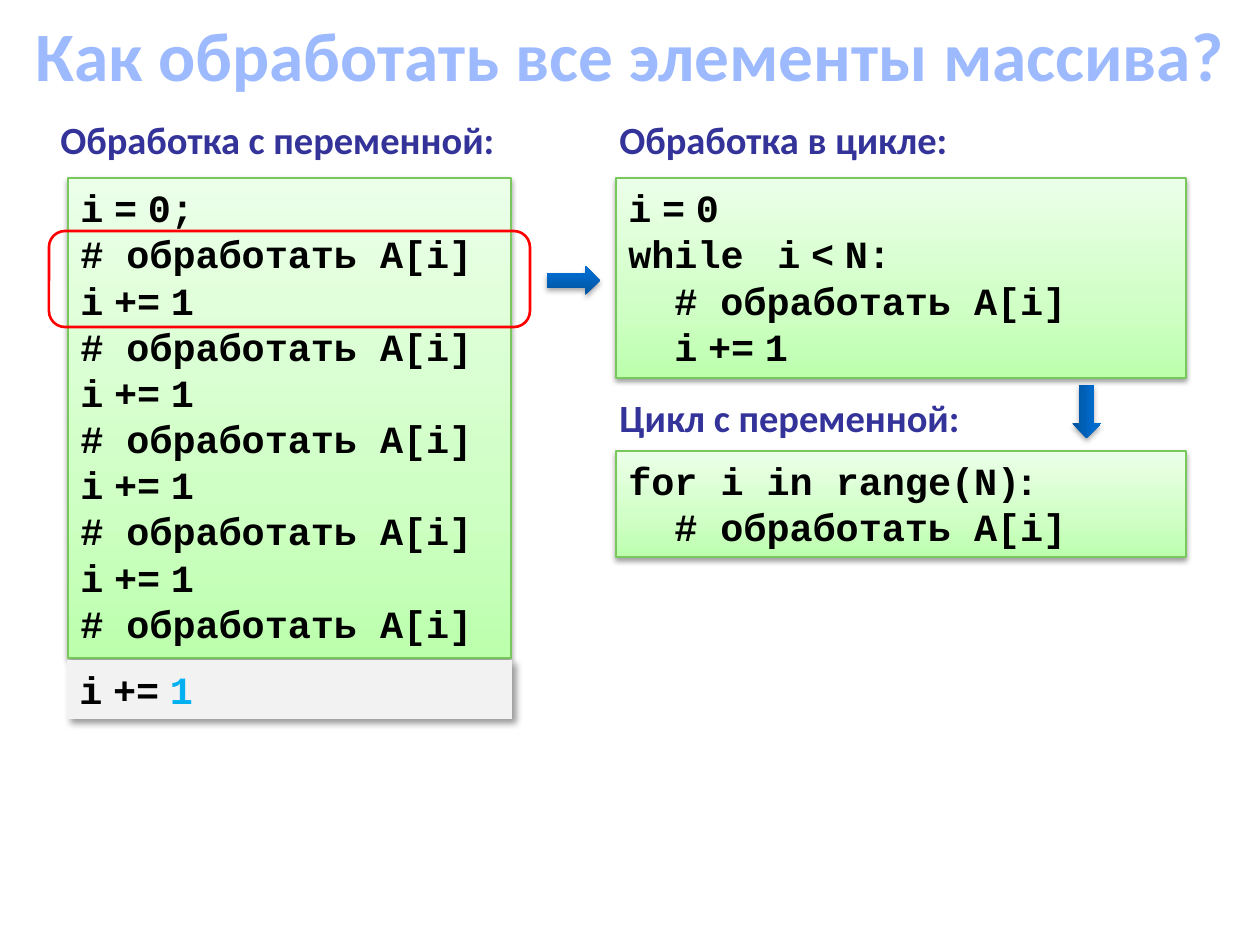
from dataclasses import dataclass

from lxml.etree import SubElement
from pptx import Presentation
from pptx.dml.color import RGBColor
from pptx.enum.shapes import MSO_SHAPE
from pptx.enum.text import MSO_ANCHOR, MSO_AUTO_SIZE, PP_ALIGN
from pptx.oxml import parse_xml
from pptx.oxml.ns import nsdecls, qn
from pptx.util import Pt


@dataclass(frozen=True)
class Theme:
    title: str = "9EBAFF"
    heading: str = "333399"
    code: str = "000000"
    number: str = "00B0F0"
    gray: str = "F2F2F2"
    edge: str = "78C85D"
    frame: str = "FF0000"
    green: tuple = ((0, "BCFFAD"), (35, "CFFFC5"), (100, "ECFFE9"))
    blue: tuple = ((0, "00539F"), (80, "006CCE"), (100, "006DCF"))
    sans: str = "Calibri"
    mono: str = "Courier New"
    narrow: str = "Arial"
    title_size: float = 39.6
    body_size: int = 22


T = Theme()
PX = 914400 / 126  # EMU in one px
CHAR = 23  # px, width of one code character


def add_shape(kind, box, stops=None, line=None, width=0.75, shadow=None):
    """Add a shape with an optional upward gradient, outline and shadow."""
    sp = s.shapes.add_shape(kind, *[int(v * PX) for v in box])
    sp.shadow.inherit = False
    if line:
        sp.line.color.rgb = RGBColor.from_string(line)
        sp.line.width = Pt(width)
    else:
        sp.line.fill.background()
    sp.fill.background()
    if stops:
        gs = "".join(f'<a:gs pos="{pos * 1000}"><a:srgbClr val="{color}"/></a:gs>'
                     for pos, color in stops)
        no_fill = sp.element.spPr.find(qn("a:noFill"))
        no_fill.getparent().replace(no_fill, parse_xml(
            f'<a:gradFill {nsdecls("a")} rotWithShape="1"><a:gsLst>{gs}</a:gsLst>'
            '<a:lin ang="16200000" scaled="0"/></a:gradFill>'))
    if shadow:
        alpha, blur, dist, angle = shadow
        effects = sp.element.spPr.find(qn("a:effectLst"))
        outer = SubElement(effects, qn("a:outerShdw"), blurRad=str(Pt(blur)),
                           dist=str(Pt(dist)), dir=str(angle * 60000),
                           algn="tl", rotWithShape="0")
        color = SubElement(outer, qn("a:srgbClr"), val="000000")
        SubElement(color, qn("a:alpha"), val=str(alpha * 1000))
    return sp


def write_code(sp, lines):
    """Write (indent, text) lines; every second part between bars is narrow."""
    tf = sp.text_frame
    tf.word_wrap = True
    tf.vertical_anchor = MSO_ANCHOR.TOP
    for n, (indent, text) in enumerate(lines):
        p = tf.add_paragraph() if n else tf.paragraphs[0]
        p.alignment = PP_ALIGN.LEFT
        p.font.size = Pt(T.body_size)
        p.font.bold = True
        if indent:
            p._p.get_or_add_pPr().set("marL", str(int(indent * CHAR * PX)))
        for k, part in enumerate(text.split("|")):
            r = p.add_run()
            r.text = part
            r.font.name = T.narrow if k % 2 else T.mono
            r.font.color.rgb = RGBColor.from_string(T.code)


prs = Presentation()
prs.slide_width, prs.slide_height = int(1260 * PX), int(945 * PX)
s = prs.slides.add_slide(prs.slide_layouts[5])

# Title
title = s.shapes.title
title.left, title.top, title.width, title.height = 0, 0, int(1260 * PX), int(107 * PX)
tf = title.text_frame
tf.text = "Как обработать все элементы массива?"
tf.word_wrap = True
tf.auto_size = MSO_AUTO_SIZE.NONE
tf.vertical_anchor = MSO_ANCHOR.MIDDLE
p = tf.paragraphs[0]
p.alignment = PP_ALIGN.CENTER
p.font.name, p.font.size, p.font.bold = T.sans, Pt(T.title_size), True
p.font.color.rgb = RGBColor.from_string(T.title)

# Headings
for x, y, text in [(48, 110, "Обработка с переменной:"),
                   (607, 110, "Обработка в цикле:"),
                   (607, 388, "Цикл с переменной:")]:
    tb = s.shapes.add_textbox(*[int(v * PX) for v in (x, y, 525, 59)])
    tf = tb.text_frame
    tf.word_wrap = True
    tf.text = text
    p = tf.paragraphs[0]
    p.font.name, p.font.size, p.font.bold = T.sans, Pt(T.body_size), True
    p.font.color.rgb = RGBColor.from_string(T.heading)

# Code blocks
process = "# обработать A[i]"
step = "i| |+=| |1"
unrolled = [(0, "i| |=| |0;")] + [(0, process), (0, step)] * 4 + [(0, process)]
while_loop = [(0, "i| |=| |0"), (0, "while | |i| |<| |N:"), (2, process), (2, step)]
for_loop = [(0, "for i in range(N)|:"), (2, process)]
for box, lines in [((68, 178, 443, 480), unrolled),
                   ((616, 178, 570, 200), while_loop),
                   ((616, 451, 570, 106), for_loop)]:
    sp = add_shape(MSO_SHAPE.RECTANGLE, box, T.green, T.edge, shadow=(38, 3.1, 1.6, 90))
    write_code(sp, lines)

# Last step, with its number highlighted
sp = add_shape(MSO_SHAPE.RECTANGLE, (67, 660, 445, 59), shadow=(40, 4, 3, 45))
sp.fill.solid()
sp.fill.fore_color.rgb = RGBColor.from_string(T.gray)
write_code(sp, [(0, step)])
sp.text_frame.paragraphs[0].runs[-1].font.color.rgb = RGBColor.from_string(T.number)

# Frame around the repeated pair
add_shape(MSO_SHAPE.ROUNDED_RECTANGLE, (49, 231, 481, 96), line=T.frame, width=1.5)

# Arrows between the versions
for x, y, angle in [(547, 266, 0), (1060, 397, 90)]:
    sp = add_shape(MSO_SHAPE.RIGHT_ARROW, (x, y, 53, 29), T.blue, shadow=(35, 3.1, 1.8, 90))
    sp.rotation = angle

prs.save("out.pptx")
